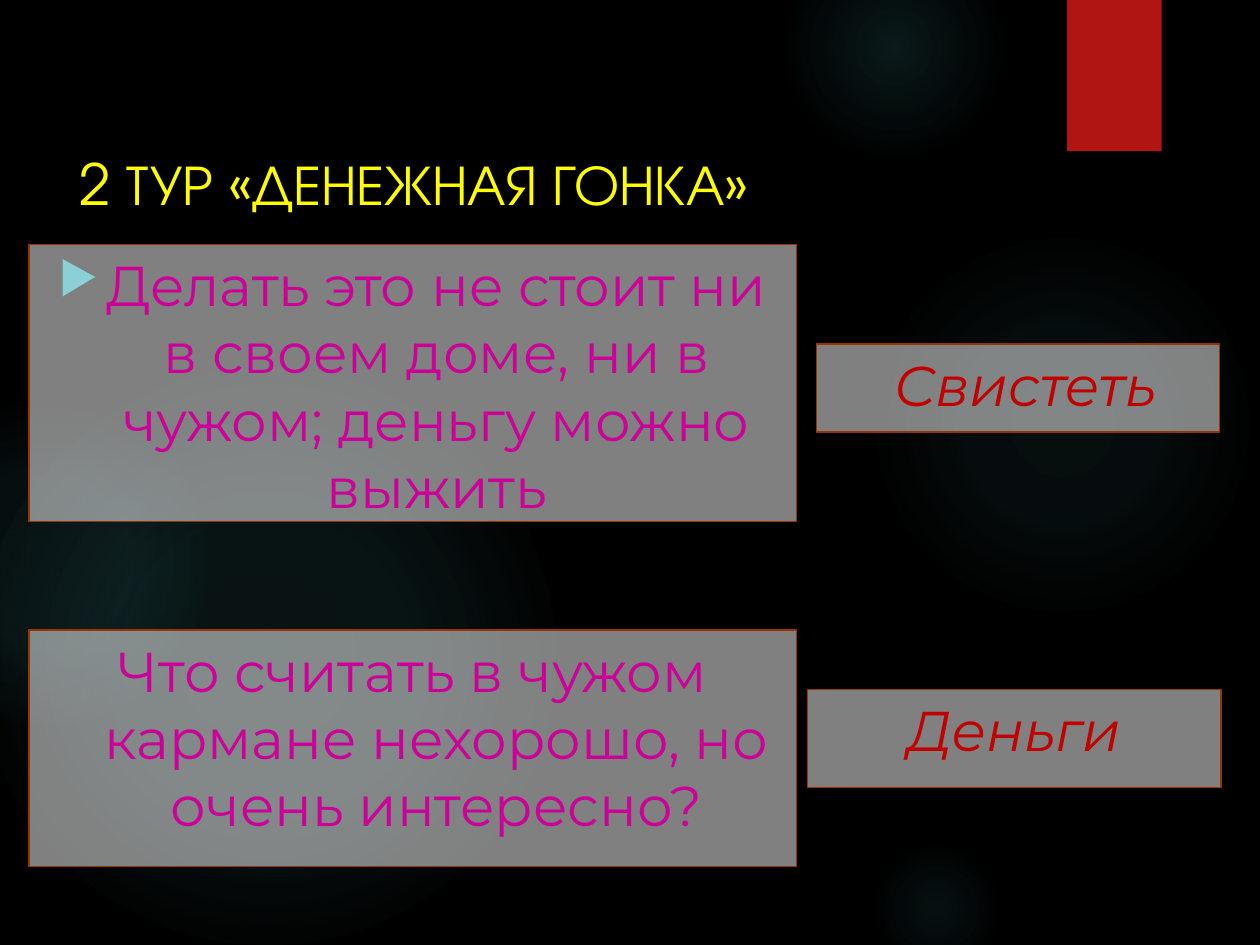
from dataclasses import dataclass

from lxml import etree
from pptx import Presentation
from pptx.dml.color import RGBColor
from pptx.enum import shapes, text
from pptx.oxml import parse_xml
from pptx.oxml.ns import nsdecls, qn
from pptx.util import Inches, Pt


@dataclass(frozen=True)
class Theme:
    background: str = "000000"
    glow: str = "50B9C1"
    ribbon: str = "B01513"
    panel: str = "FFFFFF"
    border: str = "993300"
    title: str = "FFFF00"
    question: str = "CC0099"
    answer: str = "C00000"
    bullet: str = "8AD0D6"
    title_font: str = "TeX Gyre Adventor"
    body_font: str = "Montserrat"
    title_size: float = 32.4
    body_size: float = 32


class SlideBuilder:
    def __init__(self, prs, theme):
        self.theme = theme
        self.slide = prs.slides.add_slide(prs.slide_layouts[6])
        self.paint(self.slide.background.fill, theme.background)

    def paint(self, fill, color):
        fill.solid()
        fill.fore_color.rgb = RGBColor.from_string(color)

    def shape(self, kind, left, top, width, height):
        sp = self.slide.shapes.add_shape(
            kind, Inches(left), Inches(top), Inches(width), Inches(height))
        sp.shadow.inherit = False
        sp.line.fill.background()
        return sp

    def style(self, p, font, size, color, italic=False):
        p.font.name = font
        p.font.size = Pt(size)
        p.font.italic = italic
        p.font.color.rgb = RGBColor.from_string(color)

    def glow(self, left, top, size, stops):
        """Round glow; stops are (position, opacity) in percent."""
        sp = self.shape(shapes.MSO_SHAPE.OVAL, left, top, size, size)
        sp.fill.background()
        stop_xml = "".join(
            f'<a:gs pos="{pos * 1000}"><a:srgbClr val="{self.theme.glow}">'
            f'<a:alpha val="{alpha * 1000}"/></a:srgbClr></a:gs>'
            for pos, alpha in stops)
        gradient = parse_xml(
            f'<a:gradFill {nsdecls("a")} rotWithShape="1"><a:gsLst>{stop_xml}</a:gsLst>'
            '<a:path path="circle"><a:fillToRect l="50000" t="50000" r="50000" b="50000"/>'
            '</a:path></a:gradFill>')
        props = sp.element.spPr
        props.replace(props.find(qn("a:noFill")), gradient)

    def ribbon(self, left, top, width, height):
        sp = self.shape(shapes.MSO_SHAPE.RECTANGLE, left, top, width, height)
        self.paint(sp.fill, self.theme.ribbon)

    def title(self, words, left, top, width, height):
        sp = self.slide.shapes.add_textbox(
            Inches(left), Inches(top), Inches(width), Inches(height))
        tf = sp.text_frame
        tf.word_wrap = True
        p = tf.paragraphs[0]
        p.text = words
        self.style(p, self.theme.title_font, self.theme.title_size, self.theme.title)

    def panel(self, words, left, top, width, height, color, italic=False, bullet=False):
        """Half-transparent box with centred text and a hanging indent."""
        sp = self.shape(shapes.MSO_SHAPE.RECTANGLE, left, top, width, height)
        self.paint(sp.fill, self.theme.panel)
        panel_color = sp.element.spPr.find(qn("a:solidFill"))[0]
        etree.SubElement(panel_color, qn("a:alpha"), val="50000")
        self.paint(sp.line.fill, self.theme.border)
        sp.line.width = Pt(0.75)

        tf = sp.text_frame
        tf.word_wrap = True
        tf.vertical_anchor = text.MSO_ANCHOR.TOP
        p = tf.paragraphs[0]
        p.text = words
        p.alignment = text.PP_ALIGN.CENTER
        self.style(p, self.theme.body_font, self.theme.body_size, color, italic)
        props = p._p.get_or_add_pPr()
        props.set("marL", str(Inches(0.38)))
        props.set("indent", str(-Inches(0.38)))
        if bullet:
            marks = parse_xml(
                f'<a:pPr {nsdecls("a")}><a:buClr><a:srgbClr val="{self.theme.bullet}"/>'
                '</a:buClr><a:buSzPct val="80000"/><a:buChar char="▶"/></a:pPr>')
            for index, mark in enumerate(list(marks)):
                props.insert(index, mark)


def main():
    prs = Presentation()
    prs.slide_width, prs.slide_height = Inches(10), Inches(7.5)
    theme = Theme()
    s = SlideBuilder(prs, theme)

    # Background glows and corner ribbon
    s.glow(6.89, 1.83, 3.08, [(0, 7), (36, 6), (69, 0)])
    s.glow(6.22, -0.5, 1.75, [(0, 14), (36, 7), (73, 0)])
    s.glow(6.89, 6.67, 1.08, [(0, 9), (36, 5), (66, 0)])
    s.glow(-0.17, 2.92, 4.58, [(0, 11), (36, 10), (75, 0)])
    s.glow(-0.92, 3.17, 2.58, [(0, 8), (36, 8), (72, 0)])
    s.ribbon(8.47, 0, 0.75, 1.2)

    # Title
    s.title("2 ТУР «ДЕНЕЖНАЯ ГОНКА»", 0.53, 1.13, 7.72, 0.9)

    # Questions
    s.panel("Делать это не стоит ни в своем доме, ни в чужом; деньгу можно выжить",
            0.23, 1.94, 6.09, 2.2, theme.question, bullet=True)
    s.panel("Что считать в чужом кармане нехорошо, но очень интересно?",
            0.23, 5, 6.09, 1.88, theme.question)

    # Answers
    s.panel(" Свистеть", 6.48, 2.73, 3.2, 0.7, theme.answer, italic=True)
    s.panel("Деньги", 6.41, 5.47, 3.28, 0.78, theme.answer, italic=True)

    prs.save("out.pptx")


if __name__ == "__main__":
    main()
